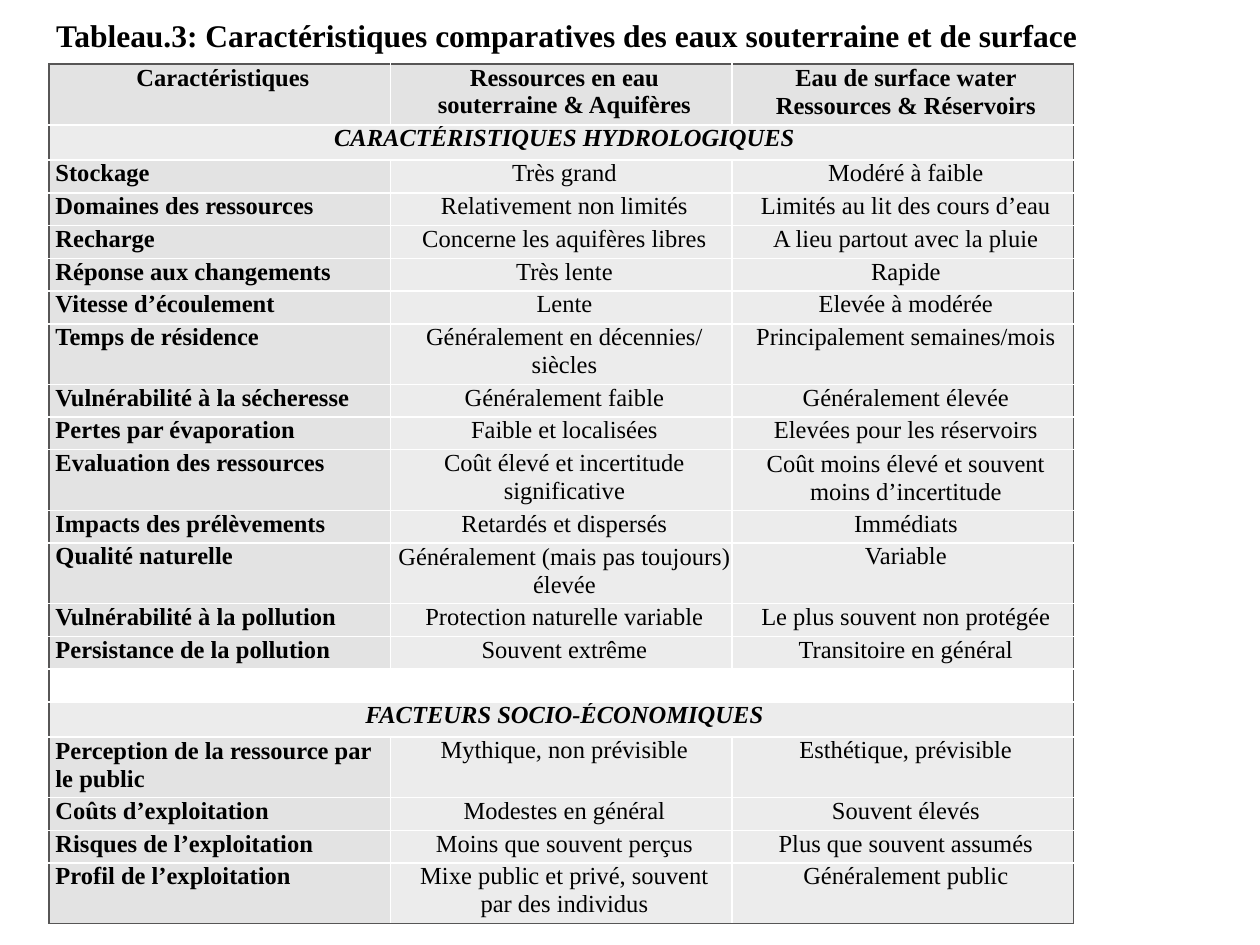
"""Builds a one-slide table comparing groundwater and surface water."""
from lxml import etree
from pptx import Presentation
from pptx import util as u
from pptx.dml.color import RGBColor
from pptx.enum import text
from pptx.oxml import ns

THEME = {
    "font": "Times New Roman", "ink": "000000", "title": u.Pt(18), "body": u.Pt(14),
    "label": "E3E3E3", "value": "ECECEC", "frame": "575656", "rule": "FFFFFF",
}
UNIT = u.Inches(0.01)
COLUMN = 271
ROW, SECTION_ROW, DOUBLE_ROW = 26, 28, 48
LONG_TEXT = 35
INDENT = 5
ROWS = [
    ("Caractéristiques", "Ressources en eau\nsouterraine & Aquifères",
     "Eau de surface water Ressources & Réservoirs"),
    ("CARACTÉRISTIQUES HYDROLOGIQUES",),
    ("Stockage", "Très grand", "Modéré à faible"),
    ("Domaines des ressources", "Relativement non limités", "Limités au lit des cours d’eau"),
    ("Recharge", "Concerne les aquifères libres", "A lieu partout avec la pluie"),
    ("Réponse aux changements", "Très lente", "Rapide"),
    ("Vitesse d’écoulement", "Lente", "Elevée à modérée"),
    ("Temps de résidence", "Généralement en décennies/\nsiècles", "Principalement semaines/mois"),
    ("Vulnérabilité à la sécheresse", "Généralement faible", "Généralement élevée"),
    ("Pertes par évaporation", "Faible et localisées", "Elevées pour les réservoirs"),
    ("Evaluation des ressources", "Coût élevé et incertitude\nsignificative",
     "Coût moins élevé et souvent moins d’incertitude"),
    ("Impacts des prélèvements", "Retardés et dispersés", "Immédiats"),
    ("Qualité naturelle", "Généralement (mais pas toujours) élevée", "Variable"),
    ("Vulnérabilité à la pollution", "Protection naturelle variable", "Le plus souvent non protégée"),
    ("Persistance de la pollution", "Souvent extrême", "Transitoire en général"),
    ("",),
    ("FACTEURS SOCIO-ÉCONOMIQUES",),
    ("Perception de la ressource par le public", "Mythique, non prévisible", "Esthétique, prévisible"),
    ("Coûts d’exploitation", "Modestes en général", "Souvent élevés"),
    ("Risques de l’exploitation", "Moins que souvent perçus", "Plus que souvent assumés"),
    ("Profil de l’exploitation", "Mixe public et privé, souvent\npar des individus", "Généralement public"),
]


def style(paragraph, size, bold, italic=False, align=text.PP_ALIGN.CENTER):
    """Sets the alignment and font of a paragraph."""
    paragraph.alignment = align
    font = paragraph.font
    font.name, font.size, font.bold, font.italic = THEME["font"], size, bold, italic
    font.color.rgb = RGBColor.from_string(THEME["ink"])


def draw_border(cell, side, color):
    """Adds a one-point line on one side of a cell."""
    line = etree.SubElement(cell._tc.get_or_add_tcPr(), ns.qn(f"a:ln{side}"), w=str(u.Pt(1)))
    fill = etree.SubElement(line, ns.qn("a:solidFill"))
    etree.SubElement(fill, ns.qn("a:srgbClr"), val=color)


deck = Presentation()
deck.slide_width, deck.slide_height = 1000 * UNIT, 750 * UNIT
page = deck.slides.add_slide(deck.slide_layouts[5])

title = page.shapes.title
title.left, title.top, title.width, title.height = [n * UNIT for n in (25, 8, 850, 40)]
frame = title.text_frame
frame.text = "Tableau.3: Caractéristiques comparatives des eaux souterraine et de surface"
frame.word_wrap = False
frame.auto_size = text.MSO_AUTO_SIZE.SHAPE_TO_FIT_TEXT
frame.vertical_anchor = text.MSO_ANCHOR.MIDDLE
style(frame.paragraphs[0], THEME["title"], True)

heights = []
for entries in ROWS:
    double = any("\n" in entry or len(entry) > LONG_TEXT for entry in entries)
    section = len(entries) == 1 and entries[0]
    heights.append(DOUBLE_ROW if double else SECTION_ROW if section else ROW)

table = page.shapes.add_table(
    len(ROWS), 3, 39 * UNIT, 51 * UNIT, 3 * COLUMN * UNIT, sum(heights) * UNIT).table
table.first_row = table.horz_banding = False
for column in table.columns:
    column.width = COLUMN * UNIT

for r, entries in enumerate(ROWS):
    table.rows[r].height = heights[r] * UNIT
    section = len(entries) == 1
    if section:
        table.cell(r, 0).merge(table.cell(r, 2))
    for c in range(3):
        cell = table.cell(r, c)
        cell.margin_right = cell.margin_top = cell.margin_bottom = 0
        cell.margin_left = INDENT * UNIT
        last = 2 if section else c
        outer = {"L": c == 0, "R": last == 2, "T": r == 0, "B": r == len(ROWS) - 1}
        for side, on_frame in outer.items():
            draw_border(cell, side, THEME["frame" if on_frame else "rule"]) \
                if on_frame or not cell.is_spanned else None
        if not any(entries):
            cell.fill.background()
            ending = cell.text_frame.paragraphs[0]._p.get_or_add_endParaRPr()
            ending.set("sz", str(int(THEME["body"].pt * 100)))
            continue
        label = r == 0 or (c == 0 and not section)
        cell.fill.solid()
        cell.fill.fore_color.rgb = RGBColor.from_string(THEME["label" if label else "value"])
        if cell.is_spanned:
            continue
        cell.text_frame.text = entries[c]
        align = text.PP_ALIGN.LEFT if label and r else text.PP_ALIGN.CENTER
        for index, paragraph in enumerate(cell.text_frame.paragraphs):
            if index:
                paragraph.space_before = u.Pt(0.4)
            if len(paragraph.text) > LONG_TEXT:
                paragraph.line_spacing = 1.03
            style(paragraph, THEME["body"], label or section, section, align)

deck.save("out.pptx")
